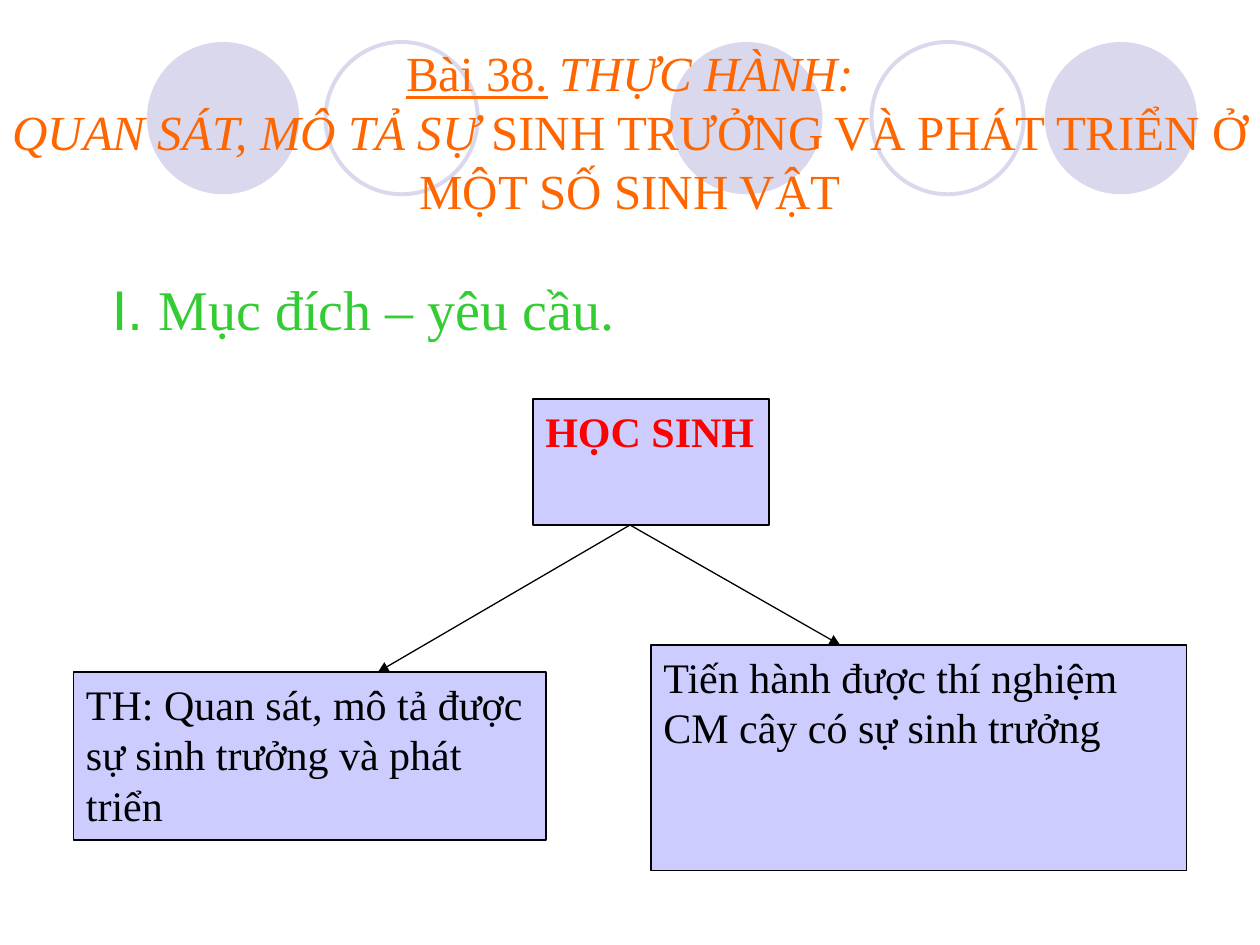
from lxml import etree
from pptx import Presentation
from pptx.dml.color import RGBColor
from pptx.enum.shapes import MSO_CONNECTOR, MSO_SHAPE
from pptx.enum.text import MSO_ANCHOR, PP_ALIGN
from pptx.oxml.ns import qn
from pptx.util import Pt

STRAIGHT = MSO_CONNECTOR.STRAIGHT
ELLIPSE, RECTANGLE = MSO_SHAPE.OVAL, MSO_SHAPE.RECTANGLE
TOP, MIDDLE = MSO_ANCHOR.TOP, MSO_ANCHOR.MIDDLE
LEFT, CENTER = PP_ALIGN.LEFT, PP_ALIGN.CENTER

THEME = {
    "serif": "Times New Roman", "sans": "Arial",
    "title": "FF6600", "heading": "33CC33", "accent": "FF0000",
    "ink": "000000", "box": "CCCCFF", "circle": "D9D8EC",
    "title_size": 28, "heading_size": 32, "box_size": 24,
    "thin": 0.75, "ring": 2.25,
}

# Runs: (text, style)
TITLE = [
    ("Bài 38.", {"underline": True}),
    (" ", {}),
    ("THỰC HÀNH:\vQUAN SÁT, MÔ TẢ SỰ", {"italic": True}),
    (" SINH TRƯỞNG VÀ PHÁT TRIỂN Ở MỘT SỐ SINH VẬT", {}),
]
HEADING = [("I. ", {"name": THEME["sans"]}), ("Mục đích – yêu cầu.", {})]

# Boxes: (left, top, width, height), colour, runs
STUDENT = ((304.5, 228, 135, 72), "accent", [("HỌC SINH", {"bold": True})])
GOALS = [
    ((42, 384, 270, 96), "ink",
     [("TH: Quan sát, mô tả được sự sinh trưởng và phát triển", {})]),
    ((372, 368.5, 306, 129), "ink",
     [("Tiến hành được thí nghiệm CM cây có sự sinh trưởng", {})]),
]
ARROW_START_X = 360
ARROW_END_XS = [216, 480]

# Circles: (left, filled)
CIRCLES = [(84, True), (186, False), (383, True), (498, False), (597, True)]
CIRCLE_TOP, CIRCLE_SIZE = 24, 87


def rgb(key):
    return RGBColor.from_string(THEME[key])


def lengths(frame):
    return [Pt(value) for value in frame]


def write(text_frame, runs, color, size, align=LEFT, anchor=TOP):
    text_frame.word_wrap = True
    text_frame.vertical_anchor = anchor
    paragraph = text_frame.paragraphs[0]
    paragraph.alignment = align
    for text, style in runs:
        # A vertical tab marks a line break within the paragraph.
        for index, part in enumerate(text.split("\v")):
            if index:
                paragraph.add_line_break()
            run = paragraph.add_run()
            run.text = part
            run.font.size = Pt(THEME[size])
            run.font.color.rgb = rgb(color)
            for key, value in {"name": THEME["serif"], **style}.items():
                setattr(run.font, key, value)


def add_figure(slide, kind, frame, fill=None, line=None, weight="thin"):
    figure = slide.shapes.add_shape(kind, *lengths(frame))
    figure.shadow.inherit = False
    if fill:
        figure.fill.solid()
        figure.fill.fore_color.rgb = rgb(fill)
    else:
        figure.fill.background()
    if line:
        figure.line.color.rgb = rgb(line)
        figure.line.width = Pt(THEME[weight])
    else:
        figure.line.fill.background()
    return figure


def add_box(slide, frame, color, runs):
    box = add_figure(slide, RECTANGLE, frame, "box", "ink")
    write(box.text_frame, runs, color, "box_size")


def add_arrow(slide, start, end):
    arrow = slide.shapes.add_connector(STRAIGHT, *lengths(start + end))
    arrow.line.color.rgb = rgb("ink")
    arrow.line.width = Pt(THEME["thin"])
    etree.SubElement(arrow.line._get_or_add_ln(), qn("a:tailEnd"), type="triangle")
    etree.SubElement(arrow._element.spPr, qn("a:effectLst"))


def main():
    deck = Presentation()
    deck.slide_width, deck.slide_height = Pt(720), Pt(540)
    slide = deck.slides.add_slide(deck.slide_layouts[6])

    for left, filled in CIRCLES:
        add_figure(slide, ELLIPSE, (left, CIRCLE_TOP, CIRCLE_SIZE, CIRCLE_SIZE),
                   fill="circle" if filled else None,
                   line=None if filled else "circle", weight="ring")

    heading = slide.shapes.add_textbox(*lengths((48, 150, 648, 42))).text_frame
    heading.margin_left, heading.margin_top = Pt(16), Pt(7)
    write(heading, HEADING, "heading", "heading_size")

    title = slide.shapes.add_textbox(*lengths((0, 0, 720, 150))).text_frame
    write(title, TITLE, "title", "title_size", CENTER, MIDDLE)

    for box in [STUDENT, *GOALS]:
        add_box(slide, *box)

    _, student_top, _, student_height = STUDENT[0]
    start = (ARROW_START_X, student_top + student_height)
    for end_x, (goal_frame, _, _) in zip(ARROW_END_XS, GOALS):
        add_arrow(slide, start, (end_x, goal_frame[1]))

    deck.save("out.pptx")


if __name__ == "__main__":
    main()
